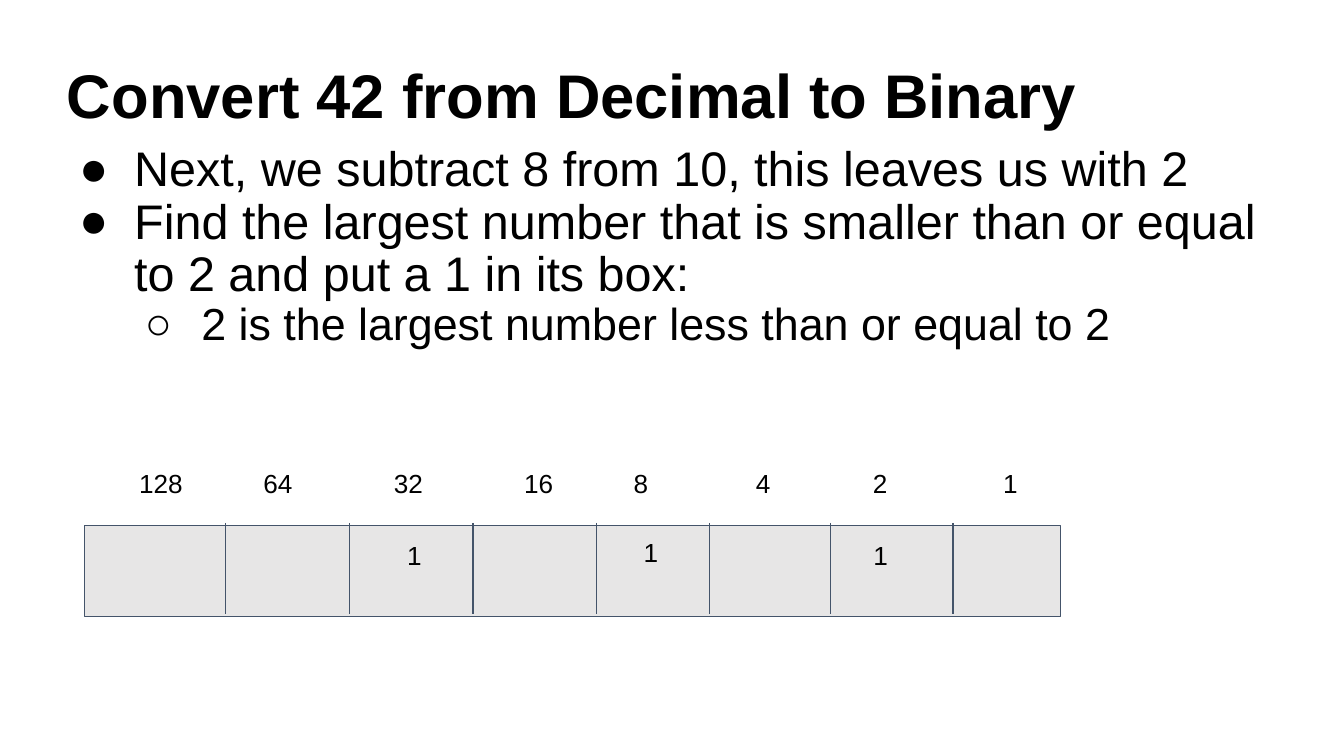
from lxml import etree
from pptx import Presentation
from pptx.dml.color import RGBColor
from pptx.enum.shapes import MSO_CONNECTOR as Connector, MSO_SHAPE as Shape
from pptx.enum.text import MSO_ANCHOR as Anchor
from pptx.oxml.ns import qn
from pptx.util import Inches, Pt

BLACK, GRAY, NAVY = "000000", "E7E6E6", "44546A"
TITLE = {"name": "Arial", "size": Pt(33), "bold": True}
POINT = {"name": "Arial", "size": Pt(26)}
SUBPOINT = {"name": "Arial", "size": Pt(24)}
LABEL = {"name": "Arial", "size": Pt(14)}

POINTS = [
    (0, "Next, we subtract 8 from 10, this leaves us with 2"),
    (0, "Find the largest number that is smaller than or equal to 2 and put a 1 in its box:"),
    (1, "2 is the largest number less than or equal to 2"),
]
LEVELS = [("●", 0.5, -0.41, POINT), ("○", 1, -0.42, SUBPOINT)]
PLACES = [(128, 0.38), (64, 1.25), (32, 2.22), (16, 3.19),
          (8, 3.95), (4, 4.86), (2, 5.73), (1, 6.7)]
DIVIDERS = [1.05, 1.97, 2.89, 3.81, 4.65, 5.55, 6.46]
BITS = [(2.03, 0, 0.27), (3.79, -0.02, 0.27), (5.55, 0, 0.22)]


def color(hex_value):
    return RGBColor.from_string(hex_value)


def add_text_box(shapes, left, top, width, height, inset=0.05):
    box = shapes.add_textbox(*map(Inches, (left, top, width, height)))
    frame = box.text_frame
    settings = {"word_wrap": True, "margin_left": Inches(0.1), "margin_right": Inches(0.1),
                "margin_top": Inches(inset), "margin_bottom": Inches(inset)}
    for name, value in settings.items():
        setattr(frame, name, value)
    return frame


def add_span(para, text, style):
    span = para.add_run()
    span.text = text
    for name, value in style.items():
        setattr(span.font, name, value)
    span.font.color.rgb = color(BLACK)


def set_indent(para, left, first=0):
    properties = para._p.get_or_add_pPr()
    properties.set("marL", str(Inches(left)))
    properties.set("indent", str(Inches(first)))
    return properties


def add_bullet(properties, symbol):
    bullet_color = etree.SubElement(properties, qn("a:buClr"))
    etree.SubElement(bullet_color, qn("a:srgbClr"), val=BLACK)
    etree.SubElement(properties, qn("a:buFont"), typeface="Arial")
    etree.SubElement(properties, qn("a:buChar"), char=symbol)


def add_title(page, left, top, width, height):
    frame = add_text_box(page.shapes, left, top, width, height)
    frame.vertical_anchor = Anchor.MIDDLE
    para = frame.paragraphs[0]
    para.line_spacing = 0.9
    add_span(para, "Convert 42 from Decimal to Binary", TITLE)


def add_points(page, left, top, width, height):
    frame = add_text_box(page.shapes, left, top, width, height)
    for index, (level, text) in enumerate(POINTS):
        para = frame.add_paragraph() if index else frame.paragraphs[0]
        symbol, indent, first, style = LEVELS[level]
        add_bullet(set_indent(para, indent, first), symbol)
        para.level = level
        para.line_spacing = 0.9
        add_span(para, text, style)


def add_place_values(shapes, left, top, width, height):
    para = add_text_box(shapes, left, top, width, height, 0.1).paragraphs[0]
    stops = etree.SubElement(para._p.get_or_add_pPr(), qn("a:tabLst"))
    for _, center in PLACES:
        etree.SubElement(stops, qn("a:tab"), pos=str(Inches(center)), algn="ctr")
    add_span(para, "".join(f"\t{value}" for value, _ in PLACES), LABEL)


def add_bit_row(page, left, top, width, height):
    shapes = page.shapes.add_group_shape().shapes
    row = shapes.add_shape(Shape.RECTANGLE, *map(Inches, (left, top, width, height)))
    row.shadow.inherit = False
    row.fill.solid()
    row.fill.fore_color.rgb = color(GRAY)
    row.line.color.rgb = color(NAVY)
    row.line.width = Pt(0.75)
    for offset in DIVIDERS:
        ends = (left + offset, top - 0.02, left + offset, top + height - 0.02)
        divider = shapes.add_connector(Connector.STRAIGHT, *map(Inches, ends))
        divider.line.color.rgb = color(NAVY)
        divider.line.width = Pt(0.75)
        etree.SubElement(divider._element.spPr, qn("a:effectLst"))
    add_place_values(shapes, left + 0.09, top - 0.53, width + 0.04, 0.51)
    for offset, shift, indent in BITS:
        frame = add_text_box(shapes, left + offset, top + shift, 0.85, height, 0.1)
        para = frame.paragraphs[0]
        set_indent(para, indent)
        add_span(para, "1", LABEL)


def main():
    deck = Presentation()
    deck.slide_width = Inches(10)
    deck.slide_height = deck.slide_width * 9 // 16
    page = deck.slides.add_slide(deck.slide_layouts[6])
    add_title(page, 0.4, 0.42, 9.21, 0.63)
    add_points(page, 0.4, 1.03, 9.21, 4.11)
    add_bit_row(page, 0.63, 3.91, 7.26, 0.68)
    deck.save("out.pptx")


if __name__ == "__main__":
    main()
